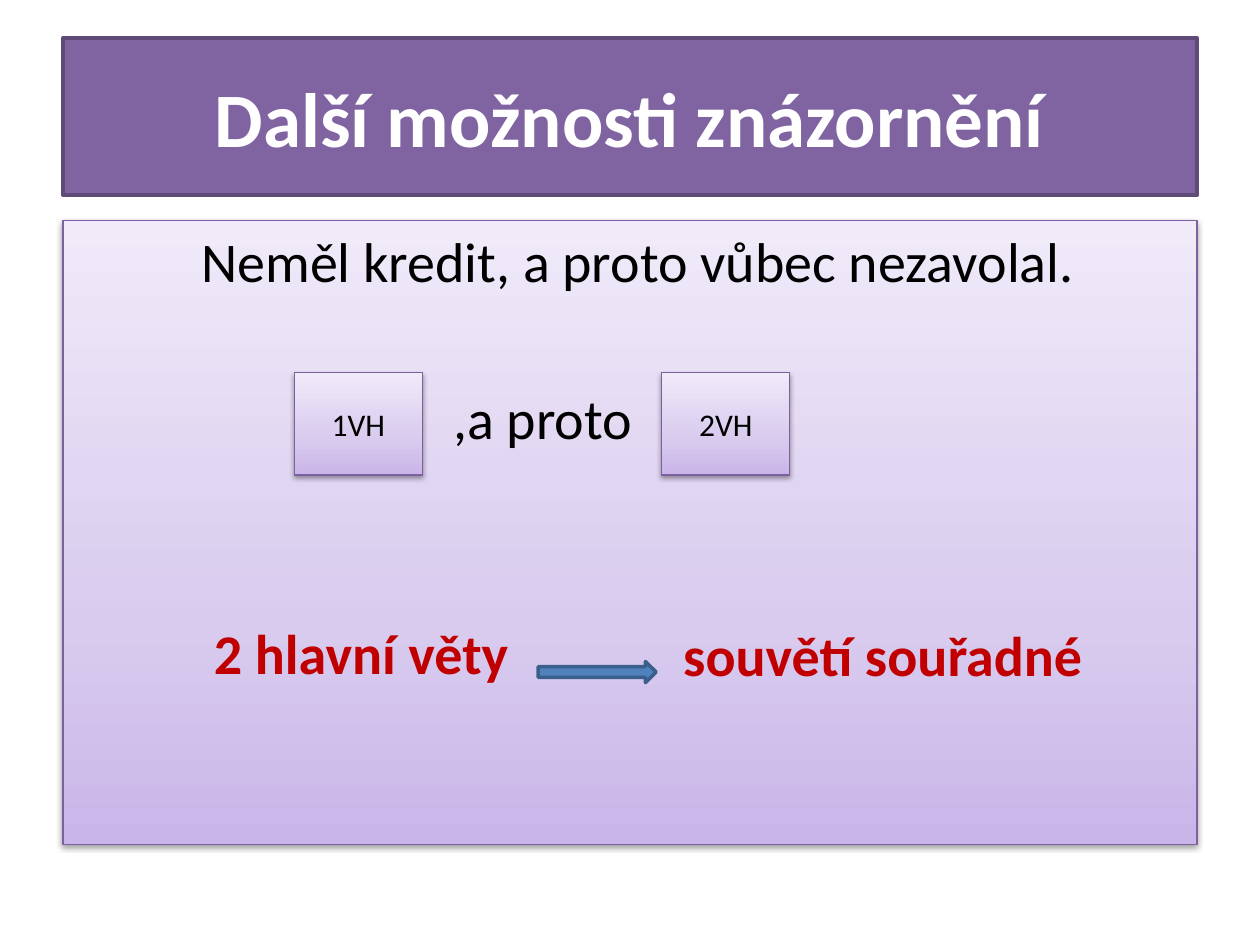
from copy import deepcopy
from dataclasses import dataclass

from lxml.etree import SubElement
from pptx import Presentation
from pptx.dml.color import RGBColor
from pptx.enum.shapes import MSO_SHAPE
from pptx.enum.text import MSO_ANCHOR, PP_ALIGN
from pptx.oxml.ns import qn
from pptx.util import Inches, Pt


@dataclass(frozen=True)
class Theme:
    """Colours, type sizes and the font of the slide."""
    font: str = "Calibri"
    banner: str = "8064A2"
    banner_edge: str = "5F4A78"
    panel_edge: str = "7D60A0"
    gradient: tuple = ((0, "C9B5E8"), (0.35, "D8CBEE"), (1, "F0EAF9"))
    arrow: str = "4F81BD"
    arrow_edge: str = "3A5F8C"
    light: str = "FFFFFF"
    dark: str = "000000"
    accent: str = "C00000"
    title_size: int = 44
    body_size: int = 32
    clause_size: int = 18


@dataclass(frozen=True)
class Box:
    """A rectangle in inches."""
    left: float
    top: float
    width: float
    height: float

    def share(self, left, top, width, height):
        """Return the part of this box given by shares of its size."""
        return Box(self.left + left * self.width, self.top + top * self.height,
                   width * self.width, height * self.height)

    def lengths(self):
        """Return the four lengths for python-pptx."""
        return [Inches(v) for v in (self.left, self.top, self.width, self.height)]


THEME = Theme()
SLIDE = Box(0, 0, 10, 7.5)


def write(line, words, align, size, color, bold=False):
    """Write words into a paragraph in the theme's face."""
    line.alignment = align
    run = line.add_run()
    run.text = words
    values = {"name": THEME.font, "size": Pt(size), "bold": bold}
    for attribute, value in values.items():
        setattr(run.font, attribute, value)
    run.font.color.rgb = RGBColor.from_string(color)


def style_line(shape, color, width):
    """Outline a shape."""
    shape.line.color.rgb = RGBColor.from_string(color)
    shape.line.width = Pt(width)


def paint_solid(shape, fill, edge):
    """Give a shape a plain fill and a firm outline."""
    shape.shadow.inherit = False
    shape.fill.solid()
    shape.fill.fore_color.rgb = RGBColor.from_string(fill)
    style_line(shape, edge, 2)


def add_card(slide, box):
    """Add a rectangle with the lilac gradient and a soft shadow."""
    card = slide.shapes.add_shape(MSO_SHAPE.RECTANGLE, *box.lengths())
    card.shadow.inherit = False
    card.fill.gradient()
    card.fill.gradient_angle = 90
    stop_list = card._element.spPr.find(".//" + qn("a:gsLst"))
    stop_list.append(deepcopy(stop_list[-1]))
    for stop, (position, color) in zip(card.fill.gradient_stops, THEME.gradient):
        stop.position = position
        stop.color.rgb = RGBColor.from_string(color)
    style_line(card, THEME.panel_edge, 0.75)
    effects = card._element.spPr.find(qn("a:effectLst"))
    shadow = SubElement(effects, qn("a:outerShdw"), blurRad=str(Pt(3.1)),
                        dist=str(Pt(1.6)), dir="5400000", rotWithShape="0")
    tint = SubElement(shadow, qn("a:srgbClr"), val=THEME.dark)
    SubElement(tint, qn("a:alpha"), val="38000")
    return card


def add_title(slide, box):
    """Place the title banner."""
    title = slide.shapes.title
    title.left, title.top, title.width, title.height = box.lengths()
    paint_solid(title, THEME.banner, THEME.banner_edge)
    title.text_frame.vertical_anchor = MSO_ANCHOR.MIDDLE
    write(title.text_frame.paragraphs[0], "Další možnosti znázornění",
          PP_ALIGN.CENTER, THEME.title_size, THEME.light, True)


def add_sentences(panel):
    """Write the example, its conjunction and the start of the conclusion."""
    frame = panel.text_frame
    frame.word_wrap = True
    frame.vertical_anchor = MSO_ANCHOR.TOP
    frame.margin_top = Inches(0.05)
    lines = (
        ("Neměl kredit, a proto vůbec nezavolal.", 1, 0, THEME.dark, False),
        (",a proto", 3, 51, THEME.dark, False),
        ("2 hlavní věty", 1.1, 96, THEME.accent, True),
    )
    for number, (words, indent, gap, color, bold) in enumerate(lines):
        line = frame.add_paragraph() if number else frame.paragraphs[0]
        line.space_before = Pt(gap)
        properties = line._p.get_or_add_pPr()
        properties.set("marL", str(Inches(indent)))
        properties.set("indent", "0")
        write(line, words, PP_ALIGN.LEFT, THEME.body_size, color, bold)


def add_result(slide, box):
    """Write the sentence type that the arrow points to."""
    frame = slide.shapes.add_textbox(*box.lengths()).text_frame
    frame.word_wrap = True
    for side in ("left", "top", "right", "bottom"):
        setattr(frame, f"margin_{side}", 0)
    write(frame.paragraphs[0], "souvětí souřadné", PP_ALIGN.LEFT,
          THEME.body_size, THEME.accent, True)


def add_clause(slide, box, label):
    """Add one clause card with its label."""
    card = add_card(slide, box)
    card.text_frame.vertical_anchor = MSO_ANCHOR.MIDDLE
    write(card.text_frame.paragraphs[0], label, PP_ALIGN.CENTER,
          THEME.clause_size, THEME.dark)


def add_diagram(slide, box):
    """Build the panel with its sentences, clause cards and arrow."""
    add_sentences(add_card(slide, box))
    add_result(slide, box.share(0.547, 0.642, 0.4, 0.11))
    for label, left in (("1VH", 0.204), ("2VH", 0.528)):
        add_clause(slide, box.share(left, 0.244, 0.113, 0.164), label)
    arrow = slide.shapes.add_shape(
        MSO_SHAPE.RIGHT_ARROW, *box.share(0.419, 0.707, 0.104, 0.034).lengths())
    paint_solid(arrow, THEME.arrow, THEME.arrow_edge)


def main():
    """Build and save the slide."""
    deck = Presentation()
    deck.slide_width, deck.slide_height = Inches(SLIDE.width), Inches(SLIDE.height)
    slide = deck.slides.add_slide(deck.slide_layouts[5])
    add_title(slide, SLIDE.share(0.05, 0.04, 0.9, 1 / 6))
    add_diagram(slide, SLIDE.share(0.05, 7 / 30, 0.9, 0.66))
    deck.save("out.pptx")


if __name__ == "__main__":
    main()
